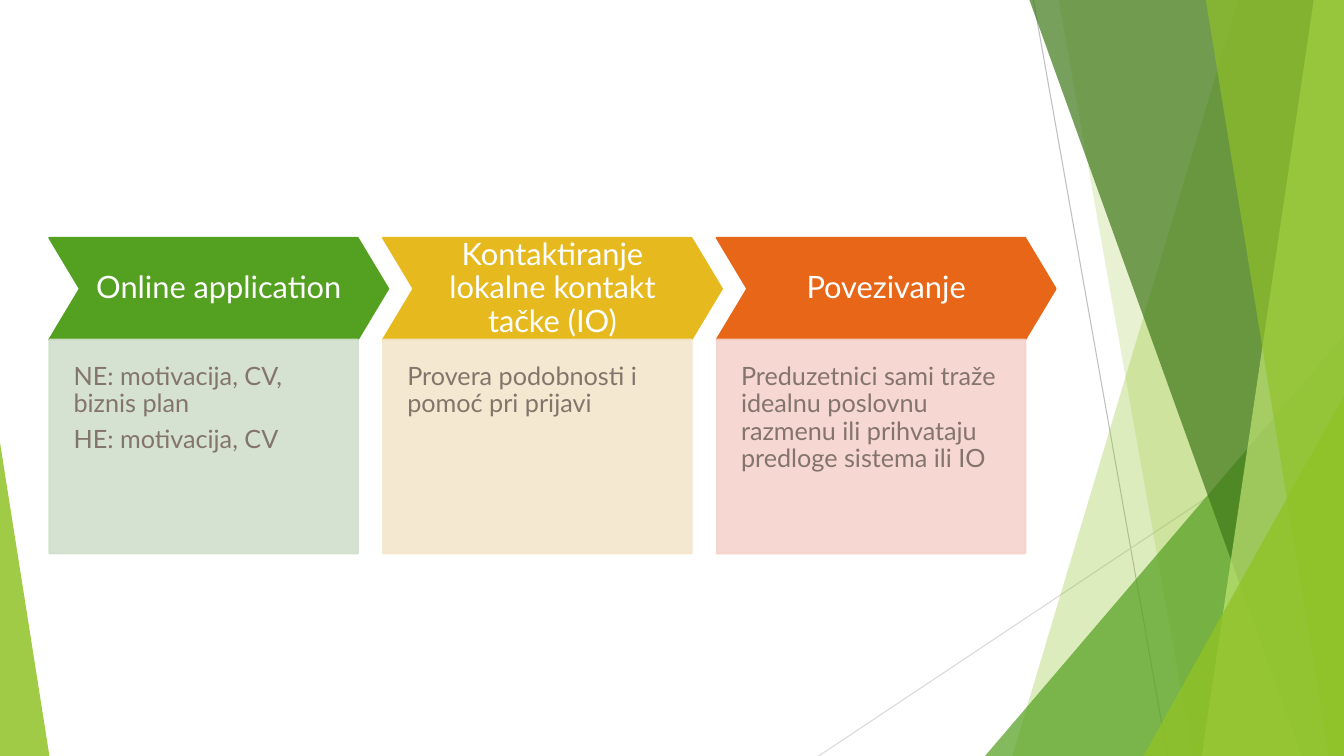
from lxml import etree
from pptx import Presentation
from pptx.dml.color import RGBColor
from pptx.enum.shapes import MSO_CONNECTOR, MSO_SHAPE
from pptx.enum.text import MSO_ANCHOR, PP_ALIGN
from pptx.oxml.ns import qn
from pptx.util import Inches, Pt

WHITE = RGBColor(0xFF, 0xFF, 0xFF)
GREY = RGBColor(0xBF, 0xBF, 0xBF)
LIGHT_GREY = RGBColor(0xD9, 0xD9, 0xD9)
BODY_TEXT = RGBColor(0x84, 0x75, 0x6C)
LIME = RGBColor(0x90, 0xC2, 0x26)
PALE_LIME = RGBColor(0xC0, 0xE4, 0x74)
GREEN = RGBColor(0x54, 0xA0, 0x21)
DARK_GREEN = RGBColor(0x3F, 0x78, 0x19)
YELLOW = RGBColor(0xE6, 0xB9, 0x1E)
ORANGE = RGBColor(0xE7, 0x66, 0x18)
GREEN_TINT = RGBColor(0xD1, 0xDF, 0xCD)
YELLOW_TINT = RGBColor(0xF5, 0xE6, 0xCD)
ORANGE_TINT = RGBColor(0xF6, 0xD3, 0xCC)

WIDTH, HEIGHT = 13.33, 7.5


def paint(sp, color, opacity, outlined=False):
    sp.shadow.inherit = False
    fills = [sp.fill]
    if outlined:
        sp.line.width = Pt(1.5)
        fills.append(sp.line.fill)
    else:
        sp.line.fill.background()
    for fill in fills:
        fill.solid()
        fill.fore_color.rgb = color
    for clr in sp._element.spPr.iter(qn("a:srgbClr")):
        etree.SubElement(clr, qn("a:alpha")).set("val", str(opacity * 1000))


def write(sp, lines, size, color, align, anchor, margins):
    tf = sp.text_frame
    tf.word_wrap = True
    tf.vertical_anchor = anchor
    tf.margin_left, tf.margin_top, tf.margin_right, tf.margin_bottom = map(Inches, margins)
    tf.text = "\n".join(lines)
    for p in tf.paragraphs:
        p.alignment = align
        p.line_spacing = 0.9
        p.space_after = Pt(size * 0.35)
        p.font.name = "Lato"
        p.font.size = Pt(size)
        p.font.color.rgb = color


prs = Presentation()
prs.slide_width, prs.slide_height = Inches(WIDTH), Inches(HEIGHT)
s = prs.slides.add_slide(prs.slide_layouts[6])

# Thin background lines
for x1, y1, x2, y2, color in [
    (10.25, 0, 11.58, HEIGHT, GREY),
    (WIDTH, 4.03, 8.12, HEIGHT, LIGHT_GREY),
]:
    line = s.shapes.add_connector(
        MSO_CONNECTOR.STRAIGHT, Inches(x1), Inches(y1), Inches(x2), Inches(y2))
    line.line.color.rgb = color
    line.line.width = Pt(0.75)
    etree.SubElement(line._element.spPr, qn("a:effectLst"))

# Translucent facets, back to front: bands reach the right edge (top x, bottom x),
# triangles stand on the bottom edge (left, top, width, apex)
for kind, place, color, opacity in [
    ("band", (12.28, 10.04), LIME, 30),
    ("band", (10.5, 11.83), LIME, 20),
    ("triangle", (9.77, 3.33, 3.56, 1), GREEN, 72),
    ("band", (10.21, 12.91), DARK_GREEN, 70),
    ("band", (13.03, 11.92), PALE_LIME, 70),
    ("band", (11.96, 13.18), LIME, 65),
    ("triangle", (11.34, 3.93, 1.99, 1), LIME, 80),
    ("triangle", (0, 4.39, 0.49, 0), LIME, 85),
]:
    if kind == "band":
        top_x, bottom_x = place
        builder = s.shapes.build_freeform(Inches(top_x), 0)
        builder.add_line_segments([
            (Inches(WIDTH), 0),
            (Inches(WIDTH), Inches(HEIGHT)),
            (Inches(bottom_x), Inches(HEIGHT)),
        ])
        sp = builder.convert_to_shape()
    else:
        left, top, width, apex = place
        sp = s.shapes.add_shape(
            MSO_SHAPE.ISOSCELES_TRIANGLE,
            Inches(left), Inches(top), Inches(width), Inches(HEIGHT - top))
        sp.adjustments[0] = apex
    paint(sp, color, opacity)

# Process steps: chevron heading above a tinted box
LEFT, TOP, PITCH = 0.49, 2.36, 3.31
HEAD_H, BOX_H = 1.01, 2.12
STEPS = [
    ("Online application", GREEN, GREEN_TINT,
     ["NE: motivacija, CV, biznis plan", "HE: motivacija, CV"]),
    ("Kontaktiranje lokalne kontakt tačke (IO)", YELLOW, YELLOW_TINT,
     ["Provera podobnosti i pomoć pri prijavi"]),
    ("Povezivanje", ORANGE, ORANGE_TINT,
     ["Preduzetnici sami traže idealnu poslovnu razmenu ili prihvataju "
      "predloge sistema ili IO"]),
]
for i, (heading, color, tint, details) in enumerate(STEPS):
    x = Inches(LEFT + i * PITCH)
    chevron = s.shapes.add_shape(
        MSO_SHAPE.CHEVRON, x, Inches(TOP), Inches(3.36), Inches(HEAD_H))
    chevron.adjustments[0] = 0.3
    paint(chevron, color, 100, outlined=True)
    write(chevron, [heading], 22, WHITE, PP_ALIGN.CENTER, MSO_ANCHOR.MIDDLE, [0.12] * 4)

    box = s.shapes.add_shape(
        MSO_SHAPE.RECTANGLE, x, Inches(TOP + HEAD_H), Inches(3.06), Inches(BOX_H))
    paint(box, tint, 90, outlined=True)
    write(box, details, 18, BODY_TEXT, PP_ALIGN.LEFT, MSO_ANCHOR.TOP,
          [0.24, 0.24, 0.24, 0.48])

prs.save("out.pptx")
